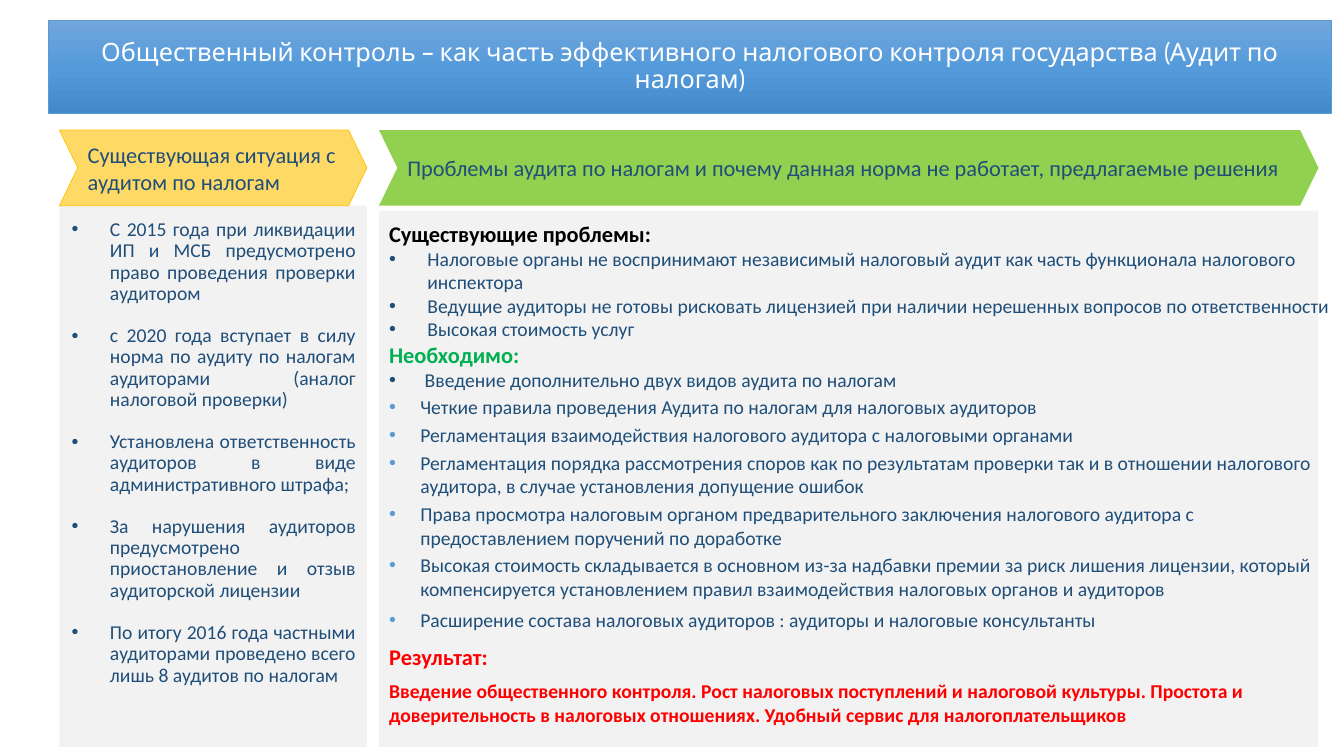
import copy

import pptx
import pptx.dml.color
import pptx.enum.shapes
import pptx.enum.text
import pptx.oxml
import pptx.oxml.ns
import pptx.util

ALIGN = pptx.enum.text.PP_ALIGN
ANCHOR = pptx.enum.text.MSO_ANCHOR
NAVY, BLUE, GREEN, RED = "1F4E79", "5B9BD5", "00B050", "FF0000"

# Boxes as left, top, width, height in percent of the slide
TITLE_BOX = (3.6, 2.67, 95.48, 12.27)
SITUATION_X, SITUATION_WIDTH = 4.42, 22.88
PROBLEMS_X, PROBLEMS_WIDTH = 28.2, 69.9
HEADER_Y, HEADER_HEIGHT = 17.2, 10
BOTTOM = 98.8
TEXT_Y = 28.4

SITUATION = [
    "С 2015 года при ликвидации ИП и МСБ предусмотрено право проведения проверки аудитором",
    "с 2020 года вступает в силу норма по аудиту по налогам аудиторами (аналог налоговой проверки)",
    "Установлена ответственность аудиторов в виде административного штрафа;",
    "За нарушения аудиторов предусмотрено приостановление и отзыв аудиторской лицензии",
    "По итогу 2016 года частными аудиторами проведено всего лишь 8 аудитов по налогам",
]
PROBLEMS = [
    "Налоговые органы не воспринимают независимый налоговый аудит как часть функционала налогового инспектора",
    "Ведущие аудиторы не готовы рисковать лицензией при наличии нерешенных вопросов по ответственности",
    "Высокая стоимость услуг",
]
NEEDS = [
    " Введение дополнительно двух видов аудита по налогам",
    "Четкие правила проведения Аудита по налогам для налоговых аудиторов",
    "Регламентация взаимодействия налогового аудитора с налоговыми органами",
    "Регламентация порядка рассмотрения споров как по результатам проверки так и в отношении "
    "налогового аудитора, в случае установления допущение ошибок",
    "Права просмотра налоговым органом предварительного заключения налогового аудитора с "
    "предоставлением поручений по доработке",
    "Высокая стоимость складывается в основном из-за надбавки премии за риск лишения лицензии, который "
    "компенсируется установлением правил взаимодействия налоговых органов и аудиторов",
    "Расширение состава налоговых аудиторов : аудиторы и налоговые консультанты",
]
RESULT = ("Введение общественного контроля. Рост налоговых поступлений и налоговой культуры. Простота и "
          "доверительность в налоговых отношениях. Удобный сервис для налогоплательщиков")


def color(hex_string):
    return pptx.dml.color.RGBColor.from_string(hex_string)


class SlideBuilder:
    font = "Calibri"

    def __init__(self, presentation, layout_index):
        self.width, self.height = presentation.slide_width, presentation.slide_height
        self.slide = presentation.slides.add_slide(presentation.slide_layouts[layout_index])

    def place(self, box):
        left, top, width, height = box
        return [round(share * side / 100) for share, side in
                zip((left, top, width, height), (self.width, self.height) * 2)]

    def outline(self, shape, line):
        if line:
            shape.line.color.rgb = color(line)
            shape.line.width = pptx.util.Pt(0.5)
        else:
            shape.line.fill.background()

    def format_runs(self, paragraph, size, text_color, bold=False, font=None):
        for run in paragraph.runs:
            run.font.name = font or self.font
            run.font.size = pptx.util.Pt(size)
            run.font.bold = bold
            run.font.color.rgb = color(text_color)

    def placeholder(self, index, box):
        shape = self.slide.placeholders[index]
        shape.left, shape.top, shape.width, shape.height = self.place(box)
        shape.text_frame.word_wrap = True
        shape.text_frame.auto_size = pptx.enum.text.MSO_AUTO_SIZE.NONE
        return shape

    def title(self, text, box, gradient):
        shape = self.placeholder(0, box)
        shape.fill.gradient()
        shape.fill.gradient_angle = 270
        stops = shape.element.spPr.find(".//" + pptx.oxml.ns.qn("a:gsLst"))
        stops.append(copy.deepcopy(stops[0]))
        for number, (stop, stop_color) in enumerate(zip(shape.fill.gradient_stops, gradient)):
            stop.position = number / (len(gradient) - 1)
            stop.color.rgb = color(stop_color)
        self.outline(shape, BLUE)
        shape.text_frame.text = text
        shape.text_frame.vertical_anchor = ANCHOR.MIDDLE
        paragraph = shape.text_frame.paragraphs[0]
        paragraph.alignment = ALIGN.CENTER
        paragraph.line_spacing = 0.9
        self.format_runs(paragraph, 18, "FFFFFF", font="Cabin")

    def shape(self, kind, box, fill, line=None):
        shape = self.slide.shapes.add_shape(kind, *self.place(box))
        shape.shadow.inherit = False
        shape.fill.solid()
        shape.fill.fore_color.rgb = color(fill)
        self.outline(shape, line)
        return shape

    def panel(self, box):
        shape = self.shape(pptx.enum.shapes.MSO_SHAPE.RECTANGLE, box, "F2F2F2")
        # Panels lie behind the placeholders
        self.slide.shapes.element.insert(2, shape.element)

    def chevron(self, text, box, fill, line=None):
        shape = self.shape(pptx.enum.shapes.MSO_SHAPE.CHEVRON, box, fill, line)
        shape.adjustments[0] = 0.243
        shape.text_frame.word_wrap = True
        shape.text_frame.text = text
        shape.text_frame.vertical_anchor = ANCHOR.MIDDLE
        paragraph = shape.text_frame.paragraphs[0]
        paragraph.alignment = ALIGN.LEFT
        self.format_runs(paragraph, 16, NAVY)

    def add_paragraph(self, text_frame, text, size=14, text_color=NAVY, bold=False, indent=0,
                      bullet_color=NAVY, before=0, after=0, spacing=1.0, align=ALIGN.LEFT):
        paragraph = text_frame.paragraphs[0]
        if paragraph.text:
            paragraph = text_frame.add_paragraph()
        paragraph.text = text
        paragraph.alignment = align
        paragraph.line_spacing = spacing
        paragraph.space_before = pptx.util.Pt(before)
        paragraph.space_after = pptx.util.Pt(after)
        self.format_runs(paragraph, size, text_color, bold)
        # Bullet and hanging indent
        properties = paragraph._p.get_or_add_pPr()
        properties.set("marL", str(pptx.util.Inches(indent)))
        properties.set("indent", str(-pptx.util.Inches(indent)))
        namespace = pptx.oxml.ns.nsdecls("a")
        bullet = [f"<a:buNone {namespace}/>"]
        if indent:
            bullet = [f'<a:buClr {namespace}><a:srgbClr val="{bullet_color}"/></a:buClr>',
                      f'<a:buFont {namespace} typeface="Arial"/>',
                      f'<a:buChar {namespace} char="•"/>']
        for xml in bullet:
            properties.append(pptx.oxml.parse_xml(xml))


def main():
    presentation = pptx.Presentation()
    presentation.slide_width = pptx.util.Inches(13.33)
    presentation.slide_height = pptx.util.Inches(7.5)
    builder = SlideBuilder(presentation, 3)

    builder.title("Общественный контроль – как часть эффективного налогового контроля государства "
                  "(Аудит по налогам)", TITLE_BOX, ("71A6DB", "559BDB", "448ACA"))

    # Column panels and headers
    for left, top, width in ((SITUATION_X, 27.2, SITUATION_WIDTH), (PROBLEMS_X, 27.87, PROBLEMS_WIDTH)):
        builder.panel((left, top, width, BOTTOM - top))
    builder.chevron("Существующая ситуация с аудитом по налогам",
                    (SITUATION_X, HEADER_Y, SITUATION_WIDTH, HEADER_HEIGHT), "FFD966", "FFC000")
    builder.chevron("Проблемы аудита по налогам и почему данная норма не работает, предлагаемые решения",
                    (PROBLEMS_X, HEADER_Y, PROBLEMS_WIDTH, HEADER_HEIGHT), "92D050")

    # Current situation
    situation = builder.placeholder(1, (4.58, TEXT_Y, 22.65, 63.6)).text_frame
    for number, text in enumerate(SITUATION):
        builder.add_paragraph(situation, text, indent=0.38, before=15.2 if number else 0,
                              spacing=0.9, align=ALIGN.JUSTIFY)

    # Problems, needs and result
    problems = builder.placeholder(2, (PROBLEMS_X, TEXT_Y, 71.62, 69.07)).text_frame
    builder.add_paragraph(problems, "Существующие проблемы:", 16, "000000", True)
    for text in PROBLEMS:
        builder.add_paragraph(problems, text, indent=0.38)
    builder.add_paragraph(problems, "Необходимо:", 16, GREEN, True)
    for number, text in enumerate(NEEDS):
        builder.add_paragraph(problems, text, indent=0.31, after=3,
                              bullet_color=BLUE if number else NAVY,
                              before=2 if text == NEEDS[-1] else 0)
    builder.add_paragraph(problems, "Результат:", 16, RED, True, before=6)
    builder.add_paragraph(problems, RESULT, 14, RED, True, before=6)

    presentation.save("out.pptx")


if __name__ == "__main__":
    main()
